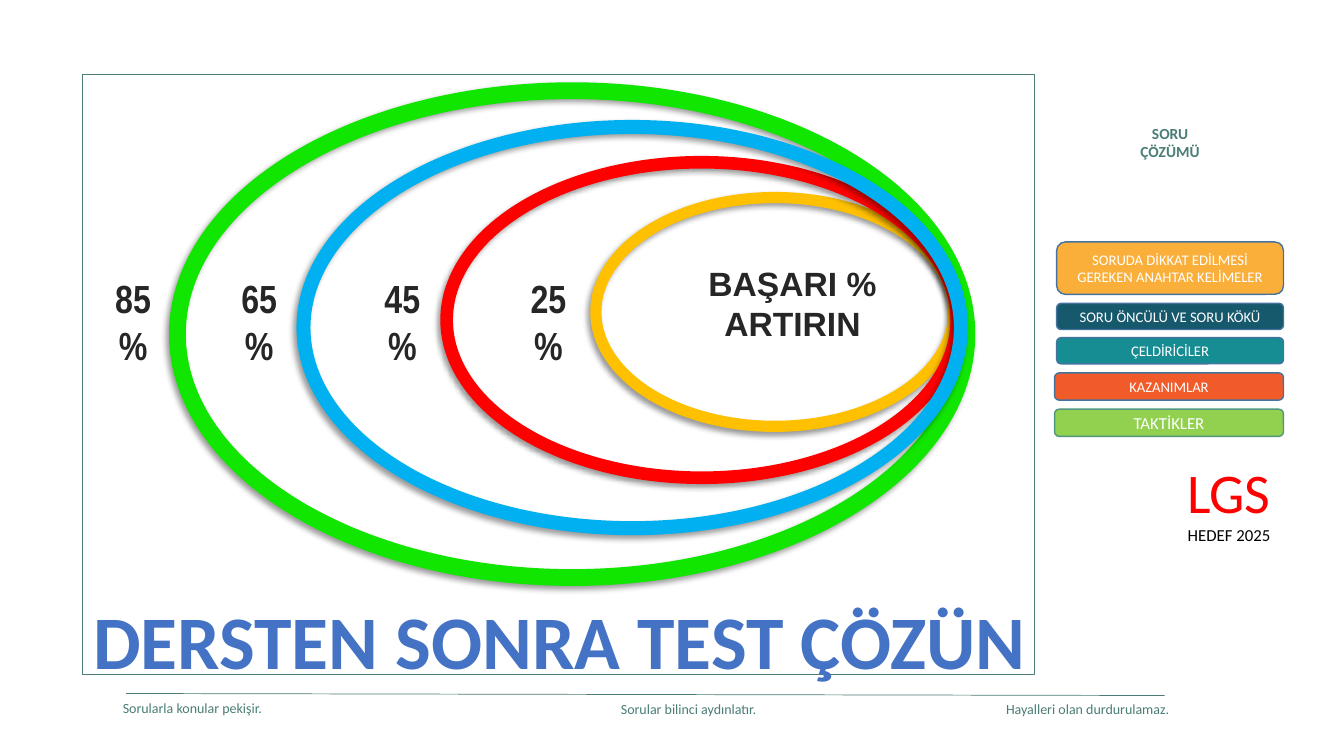
import pptx
import pptx.dml.color
import pptx.enum.shapes
import pptx.enum.text
import pptx.oxml
import pptx.oxml.ns
import pptx.util
from dataclasses import dataclass

PX = 9144  # EMU per px, 100 px to the inch


@dataclass(frozen=True)
class Theme:
    frame: str = "4B7C76"
    muted: str = "4A7D76"
    bar_line: str = "43739E"
    dark: str = "262626"
    title: str = "4472C4"
    red: str = "FF0000"
    black: str = "000000"
    white: str = "FFFFFF"
    body: str = "Calibri"
    narrow: str = "Arial Narrow"
    sans: str = "Arial"
    footer_size: float = 10
    bar_size: float = 10.5
    head_size: float = 11
    target_size: float = 12
    goal_size: float = 24
    percent_size: float = 28
    exam_size: float = 40
    title_size: float = 54


T = Theme()

FRAME = (82, 74, 944, 595)
FOOTER_LINE = (1155, 690, 125, 688)
FOOTERS = [
    ("Sorularla konular pekişir.", 112, 689),
    ("Sorular bilinci aydınlatır.", 606, 690),
    ("Hayalleri olan durdurulamaz.", 988, 690),
]
HEADING = ["SORU", "ÇÖZÜMÜ"]
# lines, box, fill, line, type size
BARS = [
    (["SORUDA DİKKAT EDİLMESİ", "GEREKEN ANAHTAR KELİMELER"],
     (1048, 240, 225, 52), "FBAF3B", T.bar_line, T.bar_size),
    (["SORU ÖNCÜLÜ VE SORU KÖKÜ"],
     (1048, 301, 225, 26), "16586C", T.bar_line, T.bar_size),
    (["ÇELDİRİCİLER"], (1048, 335, 225, 26), "168D92", T.bar_line, T.bar_size),
    (["KAZANIMLAR"], (1046, 370, 227, 27), "F15A29", T.bar_line, T.bar_size),
    (["TAKTİKLER"], (1046, 406, 227, 27), "92D050", "50977C", T.target_size),
]
TITLE = "DERSTEN SONRA TEST ÇÖZÜN"
# box, colour, line width
RINGS = [
    ((176, 90, 783, 483), "10E600", 12),
    ((591, 196, 355, 227), "FFC000", 8),
    ((443, 161, 506, 313), "FF0000", 9),
    ((301, 126, 652, 398), "00B0F0", 10),
]
PERCENTS = [("85%", 92), ("65%", 217), ("45%", 359), ("25%", 504)]
GOAL = ["BAŞARI %", "ARTIRIN"]

SHADOW = (
    '<a:effectLst %s><a:outerShdw blurRad="50800" dist="38100" dir="8100000" '
    'algn="tr" rotWithShape="0"><a:srgbClr val="000000"><a:alpha val="40000"/>'
    '</a:srgbClr></a:outerShdw></a:effectLst>'
)
OUTLINE = ('<a:ln %s w="9525"><a:solidFill><a:srgbClr val="FFFFFF"/>'
           '</a:solidFill></a:ln>')

SHAPE = pptx.enum.shapes.MSO_SHAPE
ANCHOR = pptx.enum.text.MSO_ANCHOR
ALIGN = pptx.enum.text.PP_ALIGN


def rgb(value):
    return pptx.dml.color.RGBColor.from_string(value)


def xml(template):
    return pptx.oxml.parse_xml(template % pptx.oxml.ns.nsdecls("a"))


def emu(box):
    return [v * PX for v in box]


def write(tf, lines, size, color, font=T.body, bold=False,
          align=ALIGN.CENTER, anchor=ANCHOR.TOP):
    tf.word_wrap = True
    tf.vertical_anchor = anchor
    for i, line in enumerate(lines):
        p = tf.add_paragraph() if i else tf.paragraphs[0]
        p.add_run().text = line
        p.alignment = align
        p.font.size = pptx.util.Pt(size)
        p.font.name = font
        p.font.bold = bold
        p.font.color.rgb = rgb(color)


def add_text(slide, box, lines, size, color, **style):
    tf = slide.shapes.add_textbox(*emu(box)).text_frame
    write(tf, lines, size, color, **style)
    return tf


def add_outlined(slide, kind, box, line, width, fill=None):
    sp = slide.shapes.add_shape(kind, *emu(box))
    sp.shadow.inherit = False
    if fill:
        sp.fill.solid()
        sp.fill.fore_color.rgb = rgb(fill)
    else:
        sp.fill.background()
    sp.line.color.rgb = rgb(line)
    sp.line.width = pptx.util.Pt(width)
    return sp


def add_footer(slide):
    line = slide.shapes.add_connector(
        pptx.enum.shapes.MSO_CONNECTOR.STRAIGHT, *emu(FOOTER_LINE))
    line.line.color.rgb = rgb(T.frame)
    line.line.width = pptx.util.Pt(0.5)
    line._element.spPr.append(xml("<a:effectLst %s/>"))
    for text, x, y in FOOTERS:
        add_text(slide, (x, y, 200, 27), [text], T.footer_size, T.muted,
                 align=ALIGN.LEFT)


def add_sidebar(slide):
    add_text(slide, (1116, 118, 89, 47), HEADING, T.head_size, T.muted, bold=True)
    for lines, box, fill, line, size in BARS:
        sp = add_outlined(slide, SHAPE.ROUNDED_RECTANGLE, box, line, 1, fill)
        tf = sp.text_frame
        tf.margin_top = tf.margin_bottom = 0
        write(tf, lines, size, T.white, anchor=ANCHOR.MIDDLE)
    tf = add_text(slide, (1157, 449, 124, 98), ["LGS", "HEDEF 2025"],
                  T.exam_size, T.red)
    target = tf.paragraphs[1].font
    target.size = pptx.util.Pt(T.target_size)
    target.color.rgb = rgb(T.black)


def add_rings(slide):
    add_outlined(slide, SHAPE.RECTANGLE, FRAME, T.frame, 1)
    tf = add_text(slide, (28, 584, 1054, 101), [TITLE], T.title_size, T.title,
                  bold=True)
    tf.word_wrap = False
    tf.paragraphs[0].runs[0]._r.get_or_add_rPr().insert(0, xml(OUTLINE))
    for box, color, width in RINGS:
        sp = add_outlined(slide, SHAPE.OVAL, box, color, width)
        spPr = sp._element.spPr
        spPr.remove(spPr.find(pptx.oxml.ns.qn("a:effectLst")))
        spPr.append(xml(SHADOW))
    for text, x in PERCENTS:
        add_text(slide, (x, 267, 80, 104), [text], T.percent_size, T.dark,
                 font=T.narrow, bold=True)
    add_text(slide, (691, 243, 190, 115), GOAL, T.goal_size, T.dark,
             font=T.sans, bold=True, anchor=ANCHOR.MIDDLE)


def main():
    prs = pptx.Presentation()
    prs.slide_width, prs.slide_height = emu((1333, 750))
    slide = prs.slides.add_slide(prs.slide_layouts[6])
    add_footer(slide)
    add_sidebar(slide)
    add_rings(slide)
    prs.save("out.pptx")


if __name__ == "__main__":
    main()
